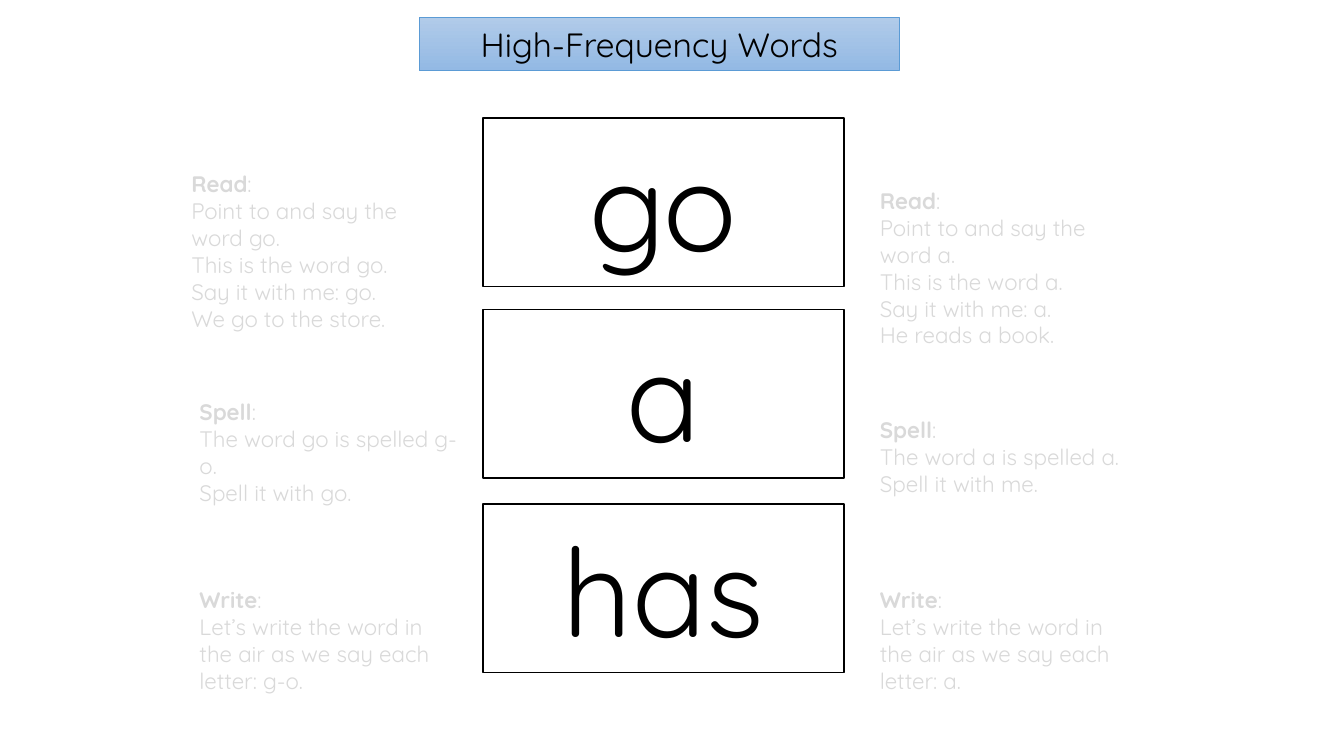
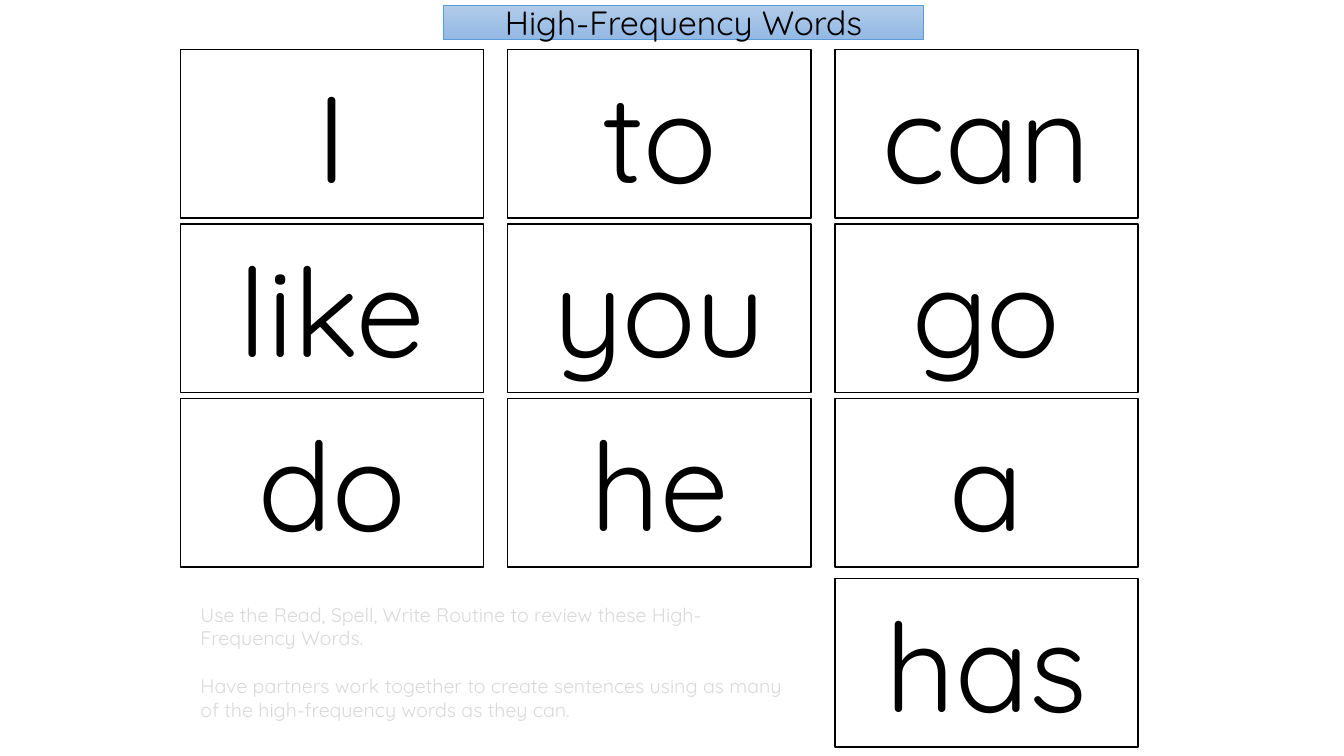
from lxml.etree import SubElement
from pptx import Presentation
from pptx.dml.color import RGBColor
from pptx.enum.shapes import MSO_SHAPE
from pptx.enum.text import MSO_ANCHOR, MSO_AUTO_SIZE, PP_ALIGN
from pptx.oxml.ns import qn
from pptx.util import Pt

FONT = "Quicksand"
HEX = {"ink": "000000", "card": "FFFFFF", "note": "D9D9D9",
       "light": "B1CBE9", "dark": "93B9E4", "edge": "5B9BD5"}
HEAD = "High-Frequency Words"
CARD_H = 120.4


def tint(name):
    return RGBColor.from_string(HEX[name])


def place(shape, box):
    shape.left, shape.top, shape.width, shape.height = [Pt(n) for n in box]


def write(para, text, size, color, bold=False):
    run = para.add_run()
    run.text = text
    font = run.font
    font.name, font.size, font.bold = FONT, Pt(size), bold
    font.color.rgb = tint(color)


def edge(shape, color, width):
    shape.line.color.rgb = tint(color)
    shape.line.width = Pt(width)


def center(shape, text, size):
    frame = shape.text_frame
    frame.word_wrap = True
    frame.auto_size = MSO_AUTO_SIZE.NONE
    frame.vertical_anchor = MSO_ANCHOR.MIDDLE
    para = frame.paragraphs[0]
    para.alignment = PP_ALIGN.CENTER
    write(para, text, size, "ink")


# Title band: the title placeholder as a rounded, shaded bar
def add_band(slide, box):
    band = slide.shapes.title
    place(band, box)
    geom = SubElement(band.element.spPr, qn("a:prstGeom"), prst="roundRect")
    SubElement(geom, qn("a:avLst"))
    band.fill.gradient()
    band.fill.gradient_angle = 270
    for stop, name in zip(band.fill.gradient_stops, ("light", "dark")):
        stop.color.rgb = tint(name)
    edge(band, "edge", 0.5)
    center(band, HEAD, 24)


# Word card
def add_card(slide, box, word):
    card = slide.shapes.add_shape(MSO_SHAPE.RECTANGLE, *[Pt(n) for n in box])
    card.shadow.inherit = False
    card.fill.solid()
    card.fill.fore_color.rgb = tint("card")
    edge(card, "ink", 1)
    center(card, word, 88)


# Pale note: an optional bold label, then one paragraph a line
def add_note(slide, box, lines, size, label=None, gap=0):
    note = slide.shapes.add_textbox(*[Pt(n) for n in box])
    frame = note.text_frame
    frame.word_wrap = True
    para = frame.paragraphs[0]
    if label:
        write(para, label, size, "note", True)
        write(para, ":", size, "note")
    for row, line in enumerate(lines):
        if label or row:
            para = frame.add_paragraph()
            para.space_before = Pt(gap)
        write(para, line, size, "note")


# Slide type 1: a stack of cards with the routine on both sides
def add_stack(slide, words, notes):
    add_band(slide, (299.5, 12.2, 342.7, 38.2))
    for top, word in zip((84.2, 221, 360), words):
        add_card(slide, (345, top, 257.8, CARD_H), word)
    for left, top, high, label, lines in notes:
        add_note(slide, (left, top, 200.2, high), lines, 16, label)


# Slide type 2: a grid of cards with one more below the last column
def add_grid(slide, rows, last, hints):
    add_band(slide, (316.8, 3.6, 342.7, 24.5))
    left, top, wide = 128.9, 35.4, 216.7
    step_x, step_y = 233.7, 124.6
    for r, words in enumerate(rows):
        for c, word in enumerate(words):
            add_card(slide, (left + c * step_x, top + r * step_y,
                             wide, CARD_H), word)
    add_card(slide, (left + 2 * step_x, 413.3, wide, CARD_H), last)
    add_note(slide, (136.1, 427, 443.5, 92.2), hints, 14, gap=17.5)


AIR = "Let’s write the word in the air as we say each letter: "
NOTES = [
    (129.6, 118.1, 123.8, "Read",
     ["Point to and say the word go.", "This is the word go.",
      "Say it with me: go.", "We go to the store."]),
    (135.4, 280.8, 85, "Spell",
     ["The word go is spelled g-o.", "Spell it with go."]),
    (135.4, 415.4, 85, "Write", [AIR + "g-o."]),
    (621.4, 130.2, 123.8, "Read",
     ["Point to and say the word a.", "This is the word a.",
      "Say it with me: a.", "He reads a book."]),
    (621.4, 293.8, 65.5, "Spell",
     ["The word a is spelled a.", "Spell it with me."]),
    (621.4, 415.4, 85, "Write", [AIR + "a."]),
]
GRID = [("I", "to", "can"), ("like", "you", "go"), ("do", "he", "a")]
HINTS = [
    "Use the Read, Spell, Write Routine to review these High- "
    "Frequency Words.",
    "Have partners work together to create sentences using as many of "
    "the high-frequency words as they can.",
]


def main():
    deck = Presentation()
    deck.slide_width, deck.slide_height = Pt(960), Pt(540)
    plain = deck.slide_layouts[5]
    add_stack(deck.slides.add_slide(plain), ("go", "a", "has"), NOTES)
    add_grid(deck.slides.add_slide(plain), GRID, "has", HINTS)
    deck.save("out.pptx")


if __name__ == "__main__":
    main()
